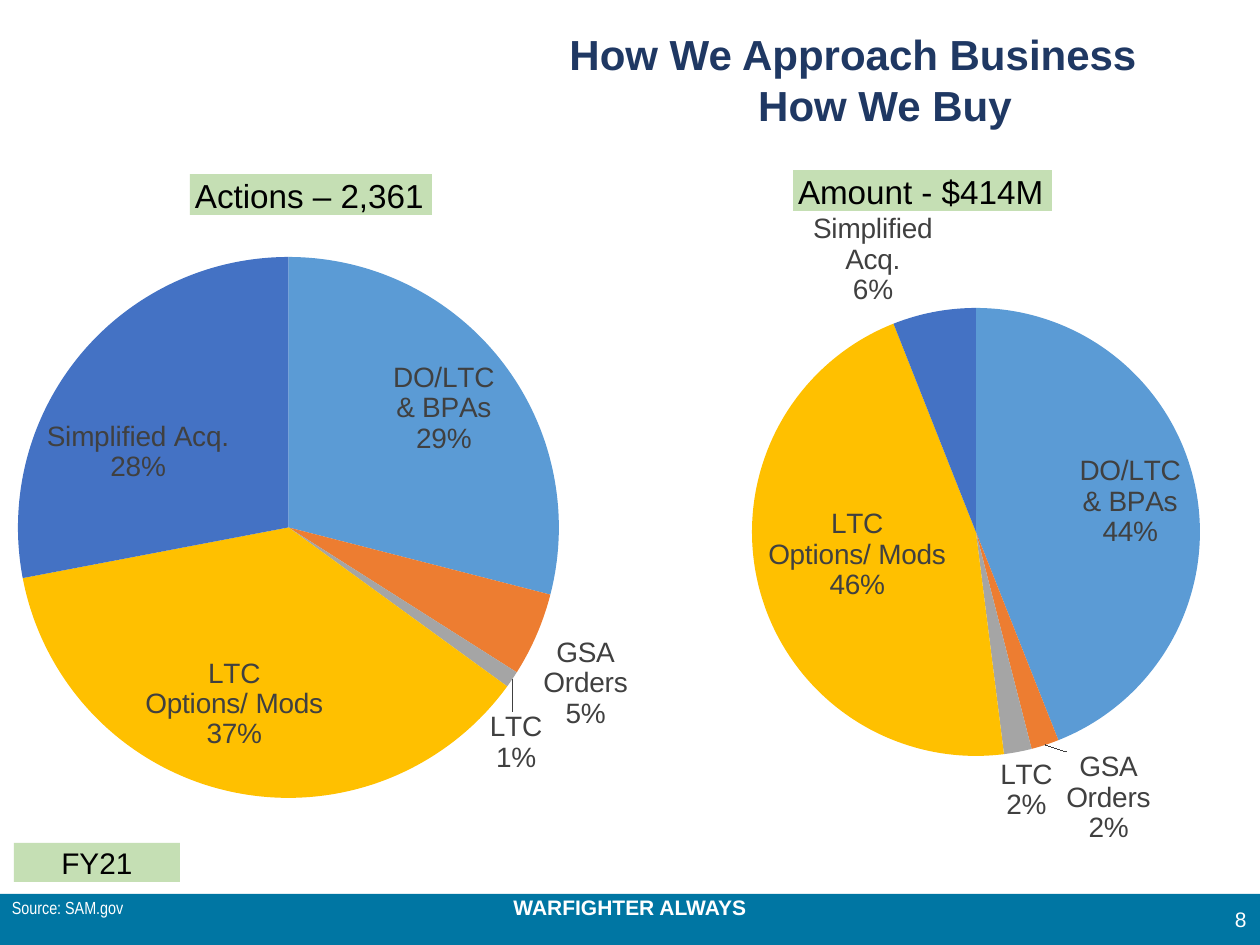
from lxml import etree
from pptx import Presentation
from pptx.chart.data import CategoryChartData
from pptx.dml.color import RGBColor
from pptx.enum.chart import XL_CHART_TYPE as ChartType, XL_LABEL_POSITION as LabelPos
from pptx.enum.shapes import MSO_SHAPE as Shape
from pptx.enum.text import PP_ALIGN as Align
from pptx.oxml import parse_xml
from pptx.oxml.ns import nsdecls, qn
from pptx.util import Emu, Pt

WHITE = RGBColor(0xFF, 0xFF, 0xFF)
BLACK = RGBColor(0, 0, 0)
NAVY = RGBColor(0x1F, 0x38, 0x63)
TEAL = RGBColor(0x00, 0x76, 0xA3)
GREEN = RGBColor(0xC5, 0xDF, 0xB4)
GREY = RGBColor(0x40, 0x40, 0x40)
SLICES = [RGBColor.from_string(c) for c in ("5B9BD5", "ED7D31", "A5A5A5", "FFC000", "4472C4")]


def px(*lengths):
    return [Emu(round(n * 914400 / 126)) for n in lengths]


def add_block(box, lines, size, color, fill=None, bold=False, align=Align.LEFT,
              font="Arial", indents=(0,)):
    if fill is None:
        block = slide.shapes.add_textbox(*px(*box))
    else:
        block = slide.shapes.add_shape(Shape.RECTANGLE, *px(*box))
        block.shadow.inherit = False
        block.fill.solid()
        block.fill.fore_color.rgb = fill
        block.line.fill.background()
    frame = block.text_frame
    frame.margin_left = frame.margin_right = frame.margin_bottom = 0
    frame.margin_top = px(1)[0]
    frame.word_wrap = True
    frame.text = "\n".join(lines)
    for paragraph, indent in zip(frame.paragraphs, indents):
        paragraph.alignment = align
        paragraph._p.get_or_add_pPr().set("marL", str(px(indent)[0]))
        for run in paragraph.runs:
            run.font.name = font
            run.font.size = Pt(size)
            run.font.bold = bold
            run.font.color.rgb = color


deck = Presentation()
deck.slide_width, deck.slide_height = px(1260, 945)
slide = deck.slides.add_slide(deck.slide_layouts[6])

add_block((0, 894, 1260, 51), [], 12, WHITE, TEAL)
add_block((0, 894, 1260, 28), ["WARFIGHTER ALWAYS"], 12, WHITE, bold=True, align=Align.CENTER)
add_block((560, 28, 586, 104), ["How We Approach Business", "How We Buy"], 24, NAVY,
          bold=True, align=Align.CENTER, indents=(0, 64))
add_block((190, 174, 242, 41), ["Actions – 2,361"], 19, BLACK, GREEN, indents=(5,))
add_block((793, 170, 259, 41), ["Amount - $414M"], 19, BLACK, GREEN, indents=(5,))
add_block((14, 843, 166, 39), ["FY21"], 17, BLACK, GREEN, align=Align.CENTER)
add_block((12, 896, 165, 22), ["Source: SAM.gov"], 10, WHITE, font="Arial Narrow")
add_block((1235, 906, 20, 25), ["8"], 12, WHITE)

categories = ["DO/LTC\n& BPAs", "GSA\nOrders", "LTC", "LTC\nOptions/ Mods", "Simplified Acq."]
pies = [
    ((-44, 248, 730, 593), (18, 257, 541), (29, 5, 1, 37, 28)),
    ((573, 195, 693, 670), (752, 308, 448), (44, 2, 2, 46, 6)),
]
for box, (pie_left, pie_top, diameter), shares in pies:
    data = CategoryChartData()
    data.categories = categories
    data.add_series("Series 1", shares)
    chart = slide.shapes.add_chart(ChartType.PIE, *px(*box), data).chart
    chart.has_legend = False
    chart.has_title = False
    chart.font.name = "Arial"
    chart.font.size = Pt(10)
    chart.font.color.rgb = BLACK

    plot = chart.plots[0]
    plot.vary_by_categories = True
    for index, color in enumerate(SLICES):
        slice_format = plot.series[0].points[index].format
        slice_format.fill.solid()
        slice_format.fill.fore_color.rgb = color
        slice_format.line.fill.background()

    labels = plot.series[0].data_labels
    labels.show_value = False
    labels.show_category_name = True
    labels.show_percentage = True
    labels.number_format = "0%"
    labels.number_format_is_linked = False
    labels.position = LabelPos.BEST_FIT
    labels.font.name = "Arial"
    labels.font.size = Pt(16)
    labels.font.color.rgb = GREY
    separator = etree.Element(qn("c:separator"))
    separator.text = "\n"
    labels._element.find(qn("c:showBubbleSize")).addnext(separator)

    left, top, width, height = box
    plot_area = ((pie_left - left) / width, (pie_top - top) / height,
                 diameter / width, diameter / height)
    area = chart._chartSpace.chart.plotArea
    for old in area.findall(qn("c:layout")):
        area.remove(old)
    sizes = "".join(f'<c:{key} val="{value:.4f}"/>' for key, value in zip("xywh", plot_area))
    area.insert(0, parse_xml(
        f'<c:layout {nsdecls("c")}><c:manualLayout><c:layoutTarget val="inner"/>'
        f'<c:xMode val="edge"/><c:yMode val="edge"/>{sizes}</c:manualLayout></c:layout>'))

deck.save("out.pptx")
